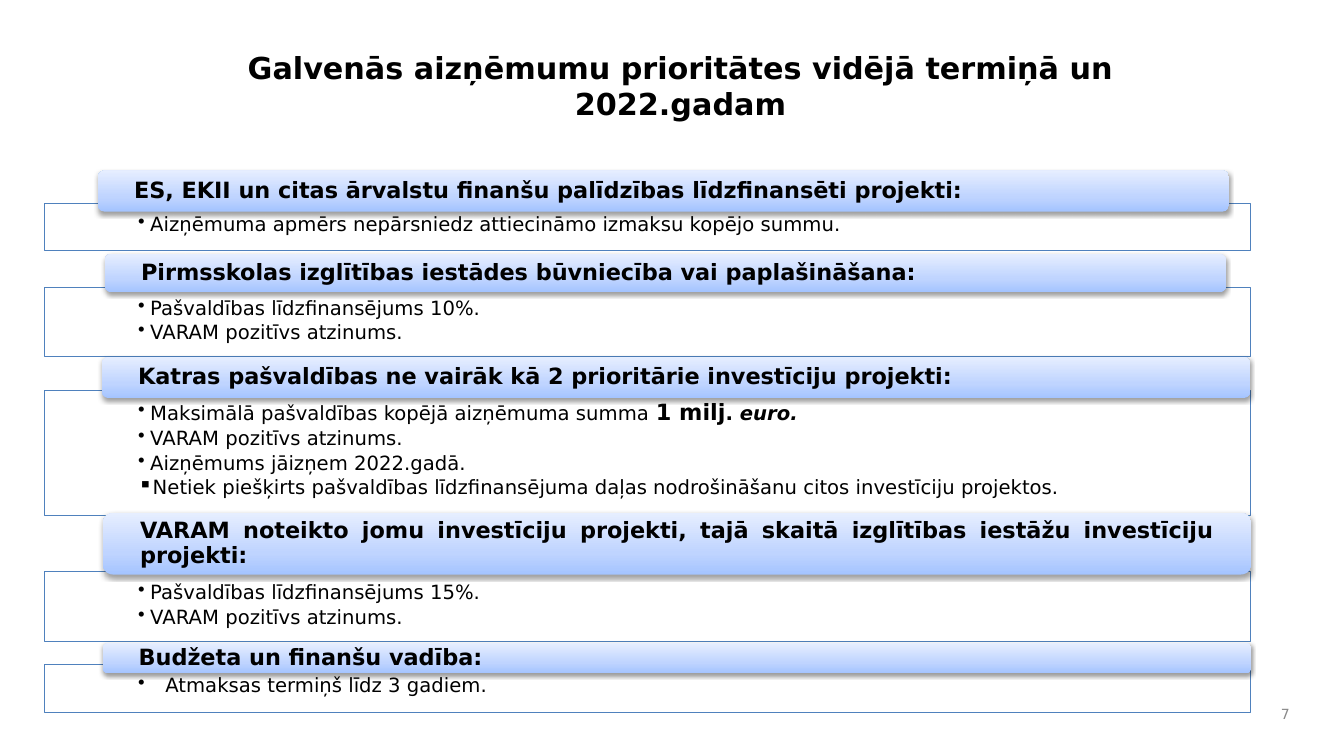
from pptx import Presentation, util as u
from pptx.dml.color import RGBColor
from pptx.enum import shapes, text
from pptx.oxml.ns import qn
from lxml import etree
from copy import deepcopy

PX = 9144
FACE = "DejaVu Sans"
DOT, BOX = "•", "▪"
LEFT, WIDTH = 44, 1196
TITLE = "Galvenās aizņēmumu prioritātes vidējā termiņā un 2022.gadam"
BLEND = [(0, "A4C4FF"), (0.35, "BFD4FF"), (1, "E6EEFF")]
PARTS = [
    ((97, 169, 1122, 41), (202, 47), 12,
     "ES, EKII un citas ārvalstu finanšu palīdzības līdzfinansēti projekti:",
     [(DOT, [("Aizņēmuma apmērs nepārsniedz attiecināmo izmaksu kopējo summu.", 14, "")])]),
    ((104, 252, 1112, 38), (285, 69), 12,
     "Pirmsskolas izglītības iestādes būvniecība vai paplašināšana:",
     [(DOT, [("Pašvaldības līdzfinansējums 10%.", 14, "")]),
      (DOT, [("VARAM pozitīvs atzinums.", 14, "")])]),
    ((101, 354, 1139, 41), (387, 124), 12,
     "Katras pašvaldības ne vairāk kā 2 prioritārie investīciju projekti:",
     [(DOT, [("Maksimālā pašvaldības kopējā aizņēmuma summa ", 14, ""),
             ("1 milj", 16, "b"), (". ", 14, "b"), ("euro.", 14, "bi")]),
      (DOT, [("VARAM pozitīvs atzinums.", 14, "")]),
      (DOT, [("Aizņēmums jāizņem 2022.gadā.", 14, "")]),
      (BOX, [("Netiek piešķirts pašvaldības līdzfinansējuma daļas nodrošināšanu "
              "citos investīciju projektos.", 14, "")])]),
    ((102, 509, 1139, 61), (567, 69), 12,
     "VARAM noteikto jomu investīciju projekti, tajā skaitā izglītības iestāžu "
     "investīciju projekti:",
     [(DOT, [("Pašvaldības līdzfinansējums 15%.", 14, "")]),
      (DOT, [("VARAM pozitīvs atzinums.", 14, "")])]),
    ((102, 638, 1139, 30), (659, 48), 27,
     "Budžeta un finanšu vadība:",
     [(DOT, [("Atmaksas termiņš līdz 3 gadiem.", 14, "")])]),
]


def px(n):
    """Turn px into EMU."""
    return u.Emu(n * PX)


def paint(color, code):
    """Set a colour from a hex string."""
    color.rgb = RGBColor.from_string(code)


def style(font, size, code="000000", bold=False):
    """Set face, size, colour and weight of a font."""
    font.name, font.size, font.bold = FACE, u.Pt(size), bold
    paint(font.color, code)


def frame(shape, sides, ends, anchor):
    """Set the insets and anchor of a shape and return its text frame."""
    tf = shape.text_frame
    tf.word_wrap = True
    tf.margin_left = tf.margin_right = px(sides)
    tf.margin_top = tf.margin_bottom = px(ends)
    tf.vertical_anchor = anchor
    return tf


def panel(slide, kind, box):
    """Add a preset shape without a shadow."""
    shape = slide.shapes.add_shape(kind, *map(px, box))
    shape.shadow.inherit = False
    return shape


def banner(slide, box, label):
    """Draw a shaded heading bar."""
    bar = panel(slide, shapes.MSO_SHAPE.ROUNDED_RECTANGLE, box)
    bar.line.fill.background()
    bar.fill.gradient()
    bar.fill.gradient_angle = 90
    first = bar.fill.gradient_stops[0]._gs
    first.addnext(deepcopy(first))
    for stop, (place, code) in zip(bar.fill.gradient_stops, BLEND):
        stop.position = place
        paint(stop.color, code)
    effect = bar._element.spPr.find(qn("a:effectLst"))
    shade = etree.SubElement(effect, qn("a:outerShdw"), blurRad="40000",
                             dist="20000", dir="5400000", rotWithShape="0")
    tint = etree.SubElement(shade, qn("a:srgbClr"), val="000000")
    etree.SubElement(tint, qn("a:alpha"), val="38000")
    para = frame(bar, 34, 0, text.MSO_ANCHOR.MIDDLE).paragraphs[0]
    para.text = label
    para.alignment = text.PP_ALIGN.JUSTIFY
    para.line_spacing = 0.9
    style(para.font, 16, bold=True)


def bullet(para, mark, hang):
    """Give a paragraph a bullet with a hanging indent."""
    props = para._p.get_or_add_pPr()
    props.set("marL", str(px(hang)))
    props.set("indent", str(-px(hang)))
    etree.SubElement(props, qn("a:buChar"), char=mark)


def detail(slide, box, hang, items):
    """Draw an outlined box with a bullet list."""
    rect = panel(slide, shapes.MSO_SHAPE.RECTANGLE, box)
    rect.fill.solid()
    paint(rect.fill.fore_color, "FFFFFF")
    fill = rect._element.spPr.find(qn("a:solidFill"))
    etree.SubElement(fill[0], qn("a:alpha"), val="90000")
    paint(rect.line.color, "4F81BD")
    rect.line.width = u.Pt(0.75)
    tf = frame(rect, 93, 11, text.MSO_ANCHOR.TOP)
    for i, (mark, runs) in enumerate(items):
        para = tf.add_paragraph() if i else tf.paragraphs[0]
        bullet(para, mark, hang)
        para.alignment = text.PP_ALIGN.JUSTIFY
        para.line_spacing = 0.9
        para.space_after = u.Pt(2.4)
        style(para.font, 14)
        for words, size, look in runs:
            run = para.add_run()
            run.text = words
            if look:
                run.font.size = u.Pt(size)
                run.font.bold = True
                run.font.italic = "i" in look


def heading(slide, box):
    """Place the slide title."""
    title = slide.shapes.title
    title.left, title.top, title.width, title.height = map(px, box)
    para = frame(title, 10, 5, text.MSO_ANCHOR.TOP).paragraphs[0]
    para.text = TITLE
    para.alignment = text.PP_ALIGN.CENTER
    style(para.font, 21.6, bold=True)


def number(slide, box):
    """Place the slide number."""
    note = slide.shapes.add_textbox(*map(px, box))
    para = frame(note, 10, 5, text.MSO_ANCHOR.MIDDLE).paragraphs[0]
    para.text = "7"
    para.alignment = text.PP_ALIGN.RIGHT
    style(para.font, 10, "898989")


def main():
    """Build and save the slide."""
    deck = Presentation()
    deck.slide_width, deck.slide_height = px(1333), px(750)
    slide = deck.slides.add_slide(deck.slide_layouts[5])
    heading(slide, (205, 44, 940, 78))
    number(slide, (1226, 692, 63, 33))
    for bar, (top, height), hang, label, items in PARTS:
        detail(slide, (LEFT, top, WIDTH, height), hang, items)
        banner(slide, bar, label)
    deck.save("out.pptx")


if __name__ == "__main__":
    main()
